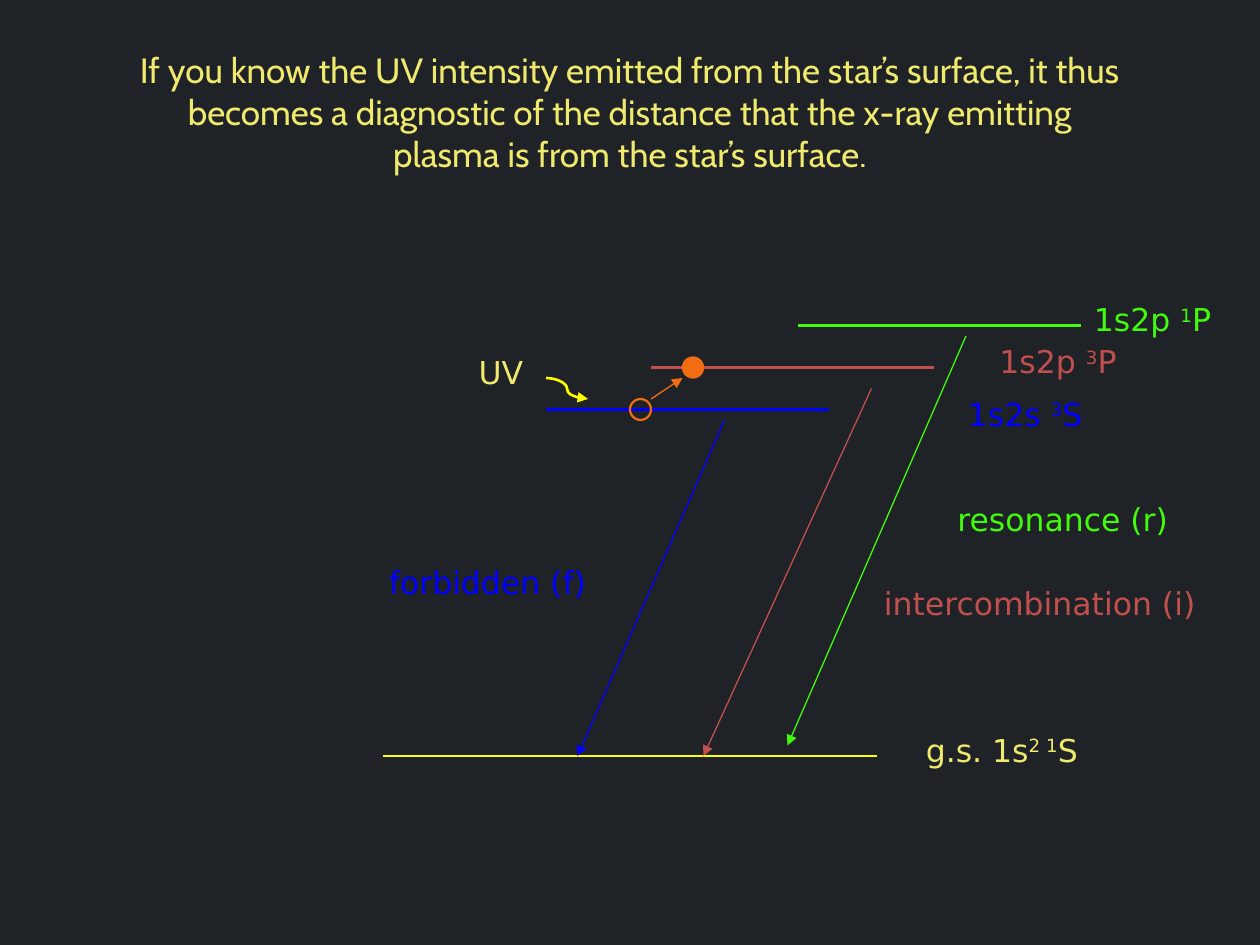
from dataclasses import dataclass

from lxml import etree
from pptx import Presentation, util as u
from pptx.dml.color import RGBColor
from pptx.enum import shapes, text
from pptx.oxml.ns import qn

EMU_PER_PX = 7620  # 120 px to the inch


@dataclass(frozen=True)
class Theme:
    background: str = "1F2226"
    text: str = "EFE96D"
    yellow: str = "FFFF00"
    forbidden: str = "0000FF"
    intercombination: str = "C0504D"
    resonance: str = "41FA0E"
    electron: str = "F26C13"
    title_font: str = "Cabin"
    label_font: str = "DejaVu Sans"
    title_size: int = 20
    label_size: int = 18
    thin: float = 0.75
    level: float = 1.25
    photon: float = 1.5


def px(*lengths):
    return [u.Emu(n * EMU_PER_PX) for n in lengths]


def rgb(code):
    return RGBColor.from_string(code)


class Diagram:
    def __init__(self, s, theme):
        self.s, self.theme = s, theme
        fill = s.background.fill
        fill.solid()
        fill.fore_color.rgb = rgb(theme.background)

    def set_text(self, sp, parts, font, size, color, align="LEFT", wrap=True):
        """Fill a text shape; every second part is superscript."""
        tf = sp.text_frame
        frame = {"word_wrap": wrap, "vertical_anchor": text.MSO_ANCHOR.TOP,
                 "auto_size": text.MSO_AUTO_SIZE.SHAPE_TO_FIT_TEXT}
        for name, value in frame.items():
            setattr(tf, name, value)
        p = tf.paragraphs[0]
        p.alignment = getattr(text.PP_ALIGN, align)
        for i, part in enumerate(parts):
            r = p.add_run()
            r.text = part
            for name, value in {"name": font, "size": u.Pt(size)}.items():
                setattr(r.font, name, value)
            r.font.color.rgb = rgb(color)
            if i % 2:
                r._r.get_or_add_rPr().set("baseline", "30000")

    def title(self, words, x, y, w, h):
        sp = self.s.shapes.title
        sp.left, sp.top, sp.width, sp.height = px(x, y, w, h)
        t = self.theme
        self.set_text(sp, [words], t.title_font, t.title_size, t.text, "CENTER")

    def label(self, parts, x, y, w, color, **layout):
        sp = self.s.shapes.add_textbox(*px(x, y, w, 48))
        t = self.theme
        self.set_text(sp, parts, t.label_font, t.label_size, color, **layout)

    def line(self, start, end, color, width, arrow=False, kind="STRAIGHT"):
        sp = self.s.shapes.add_connector(
            getattr(shapes.MSO_CONNECTOR, kind), *px(*start, *end))
        sp.line.color.rgb = rgb(color)
        sp.line.width = u.Pt(width)
        props = sp._element.spPr
        if arrow:
            etree.SubElement(props.find(qn("a:ln")), qn("a:tailEnd"), type="triangle")
        etree.SubElement(props, qn("a:effectLst"))

    def level(self, x, y, length, color):
        self.line((x, y), (x + length, y), color, self.theme.level)

    def arrow(self, start, end, color):
        self.line(start, end, color, self.theme.thin, arrow=True)

    def electron(self, x, y, width, filled):
        """Draw an electron centred at x, y."""
        sp = self.s.shapes.add_shape(shapes.MSO_SHAPE.OVAL, *px(x - 10, y - 10, 20, 20))
        sp.shadow.inherit = False
        color = rgb(self.theme.electron)
        if filled:
            sp.fill.solid()
            sp.fill.fore_color.rgb = color
        else:
            sp.fill.background()
        sp.line.color.rgb = color
        sp.line.width = u.Pt(width)


def main():
    prs = Presentation()
    prs.slide_width, prs.slide_height = px(1200, 900)
    t = Theme()
    d = Diagram(prs.slides.add_slide(prs.slide_layouts[5]), t)

    d.title("If you know the UV intensity emitted from the star’s surface, it thus "
            "becomes a diagnostic of the distance that the x-ray emitting plasma "
            "is from the star’s surface.", 120, 40, 960, 132)

    d.level(365, 720, 470, t.yellow)
    for x, y, color in ((520, 390, t.forbidden),
                        (620, 350, t.intercombination),
                        (760, 310, t.resonance)):
        d.level(x, y, 270, color)

    for start, end, color in (((920, 320), (750, 710), t.resonance),
                              ((690, 400), (550, 720), t.forbidden),
                              ((830, 370), (670, 720), t.intercombination)):
        d.arrow(start, end, color)

    d.label(["1s2s ", "3", "S"], 910, 370, 137, t.forbidden, wrap=False)
    d.label(["1s2p ", "3", "P"], 940, 320, 150, t.intercombination)
    d.label(["1s2p ", "1", "P"], 1030, 280, 150, t.resonance)
    d.label(["g.s. 1s", "2 1", "S"], 870, 690, 240, t.text)
    d.label(["resonance (r)"], 900, 470, 280, t.resonance)
    d.label(["intercombination (i)"], 830, 550, 330, t.intercombination)
    d.label(["forbidden (f)"], 220, 530, 350, t.forbidden, align="RIGHT")
    d.label(["UV"], 400, 330, 110, t.text, align="RIGHT")

    d.electron(610, 390, t.level, filled=False)
    d.line((520, 360), (560, 380), t.yellow, t.photon, arrow=True, kind="CURVE")
    d.electron(660, 350, t.thin, filled=True)
    d.arrow((620, 380), (650, 360), t.electron)

    prs.save("out.pptx")


if __name__ == "__main__":
    main()
